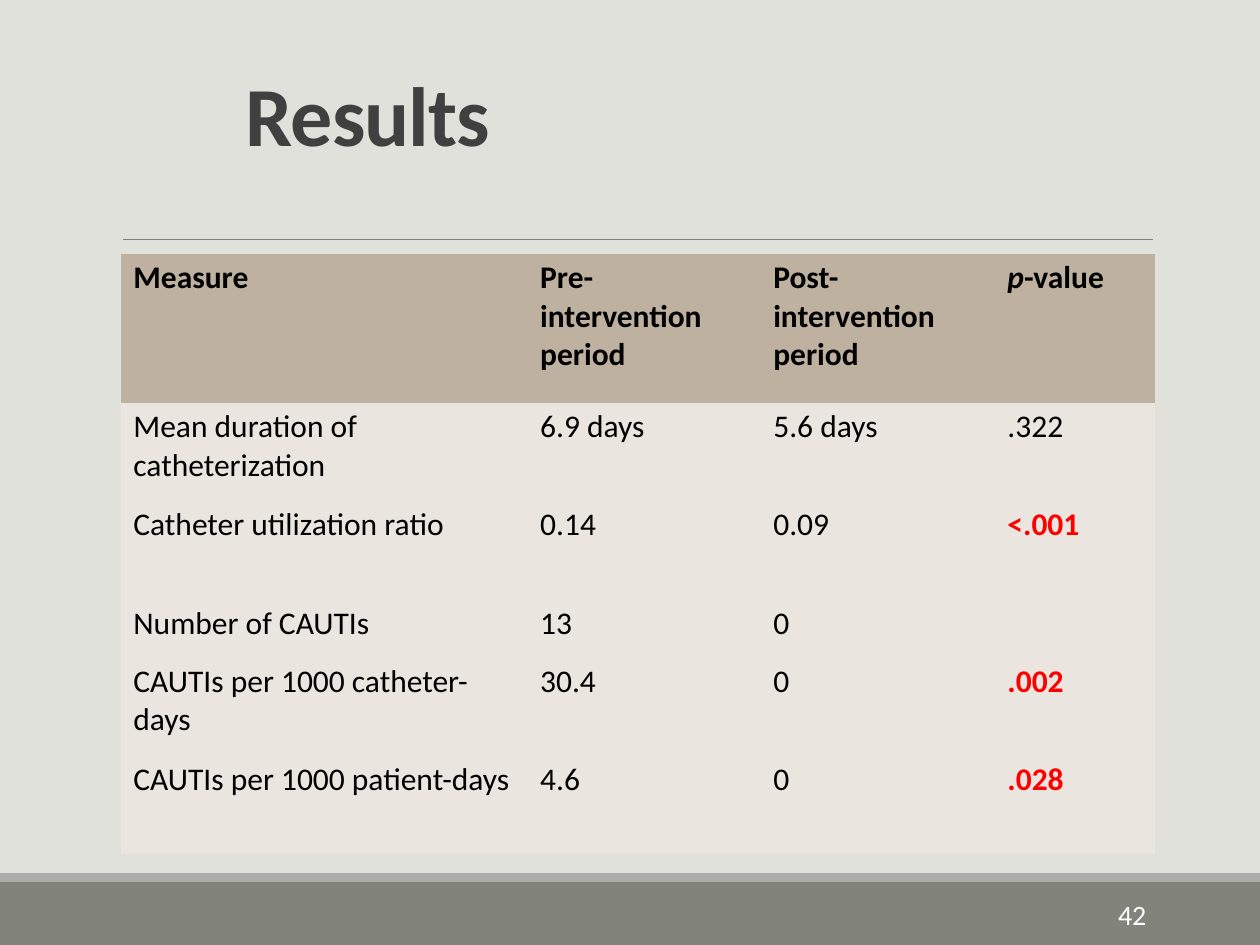
from dataclasses import dataclass

from lxml import etree
from pptx import Presentation
from pptx.dml.color import RGBColor
from pptx.enum.shapes import MSO_CONNECTOR, MSO_SHAPE
from pptx.enum.text import MSO_ANCHOR, PP_ALIGN
from pptx.oxml.ns import qn
from pptx.util import Cm, Pt

RECTANGLE = MSO_SHAPE.RECTANGLE
STRAIGHT = MSO_CONNECTOR.STRAIGHT
LEFT, RIGHT = PP_ALIGN.LEFT, PP_ALIGN.RIGHT
MIDDLE, BOTTOM = MSO_ANCHOR.MIDDLE, MSO_ANCHOR.BOTTOM
PLAIN_TABLE_STYLE = "{2D5ABB26-0587-4C30-8999-92F81FD0307C}"


@dataclass(frozen=True)
class Theme:
    font: str = "Calibri"
    background: str = "E1E1DB"
    footer: str = "82847C"
    footer_edge: str = "ACADA8"
    rule: str = "808080"
    header_fill: str = "BFB19F"
    body_fill: str = "EAE5DF"
    title: str = "404040"
    text: str = "000000"
    significant: str = "FF0000"
    page_number: str = "FFFFFF"
    title_size: int = 48
    table_size: int = 18
    page_number_size: int = 16


THEME = Theme()
COLUMN_WIDTHS = (8.2, 4.7, 4.72, 3.23)
ROW_HEIGHTS = (3, 1.98, 1.98, 1.17, 1.98, 1.98)
HEADINGS = ("Measure", "Pre-intervention period", "Post-intervention period", "p-value")
RESULTS = (
    ("Mean duration of catheterization", "6.9 days", "5.6 days", ".322"),
    ("Catheter utilization ratio", "0.14", "0.09", "<.001"),
    ("Number of CAUTIs", "13", "0", ""),
    ("CAUTIs per 1000 catheter-days", "30.4", "0", ".002"),
    ("CAUTIs per 1000 patient-days", "4.6", "0", ".028"),
)
SIGNIFICANT_VALUES = {"<.001", ".002", ".028"}


def set_fill(target, color):
    target.fill.solid()
    target.fill.fore_color.rgb = RGBColor.from_string(color)


def add_run(paragraph, text, size, color, bold=False, italic=False):
    run = paragraph.add_run()
    run.text = text
    font = run.font
    font.name = THEME.font
    font.size = Pt(size)
    font.bold = bold
    font.italic = italic
    font.color.rgb = RGBColor.from_string(color)
    return run


def add_band(slide, top, height, color):
    shape = slide.shapes.add_shape(RECTANGLE, Cm(0), Cm(top), Cm(25.4), Cm(height))
    shape.shadow.inherit = False
    set_fill(shape, color)
    shape.line.fill.background()


def add_rule(slide, left, right, top):
    connector = slide.shapes.add_connector(STRAIGHT, Cm(left), Cm(top), Cm(right), Cm(top))
    connector.line.color.rgb = RGBColor.from_string(THEME.rule)
    connector.line.width = Pt(0.5)
    etree.SubElement(connector._element.spPr, qn("a:effectLst"))


def add_text_box(slide, left, top, width, height, anchor, alignment):
    text_box = slide.shapes.add_textbox(Cm(left), Cm(top), Cm(width), Cm(height))
    text_frame = text_box.text_frame
    text_frame.word_wrap = True
    text_frame.vertical_anchor = anchor
    paragraph = text_frame.paragraphs[0]
    paragraph.alignment = alignment
    return paragraph


def add_title(slide, text):
    paragraph = add_text_box(slide, 4.7, 1.32, 14.66, 2.11, BOTTOM, LEFT)
    paragraph.line_spacing = 0.85
    run = add_run(paragraph, text, THEME.title_size, THEME.title, bold=True)
    run.font._element.set("spc", "-50")


def fill_cell(cell, text, is_header):
    set_fill(cell, THEME.header_fill if is_header else THEME.body_fill)
    cell.margin_left = cell.margin_right = Cm(0.25)
    cell.margin_top = cell.margin_bottom = Cm(0.1)
    paragraph = cell.text_frame.paragraphs[0]
    significant = text in SIGNIFICANT_VALUES
    color = THEME.significant if significant else THEME.text
    if text == "p-value":
        add_run(paragraph, "p", THEME.table_size, color, bold=True, italic=True)
        text = "-value"
    if text:
        add_run(paragraph, text, THEME.table_size, color, bold=is_header or significant)


def add_results_table(slide):
    rows = (HEADINGS, *RESULTS)
    frame = slide.shapes.add_table(
        len(rows), len(HEADINGS), Cm(2.44), Cm(5.12),
        Cm(sum(COLUMN_WIDTHS)), Cm(sum(ROW_HEIGHTS)),
    )
    table = frame.table
    table.horz_banding = False
    table._tbl.tblPr.find(qn("a:tableStyleId")).text = PLAIN_TABLE_STYLE
    for column, width in zip(table.columns, COLUMN_WIDTHS):
        column.width = Cm(width)
    for row, height, values in zip(table.rows, ROW_HEIGHTS, rows):
        row.height = Cm(height)
        for cell, text in zip(row.cells, values):
            fill_cell(cell, text, is_header=values is HEADINGS)


def add_page_number(slide, text):
    paragraph = add_text_box(slide, 20.62, 17.93, 2.74, 1.02, MIDDLE, RIGHT)
    add_run(paragraph, text, THEME.page_number_size, THEME.page_number)


def main():
    presentation = Presentation()
    presentation.slide_width = Cm(25.4)
    presentation.slide_height = Cm(19.05)
    slide = presentation.slides.add_slide(presentation.slide_layouts[6])
    set_fill(slide.background, THEME.background)
    add_band(slide, 17.78, 1.27, THEME.footer)
    add_band(slide, 17.6, 0.18, THEME.footer_edge)
    add_rule(slide, 2.48, 23.24, 4.83)
    add_results_table(slide)
    add_title(slide, "Results")
    add_page_number(slide, "42")
    presentation.save("out.pptx")


if __name__ == "__main__":
    main()
